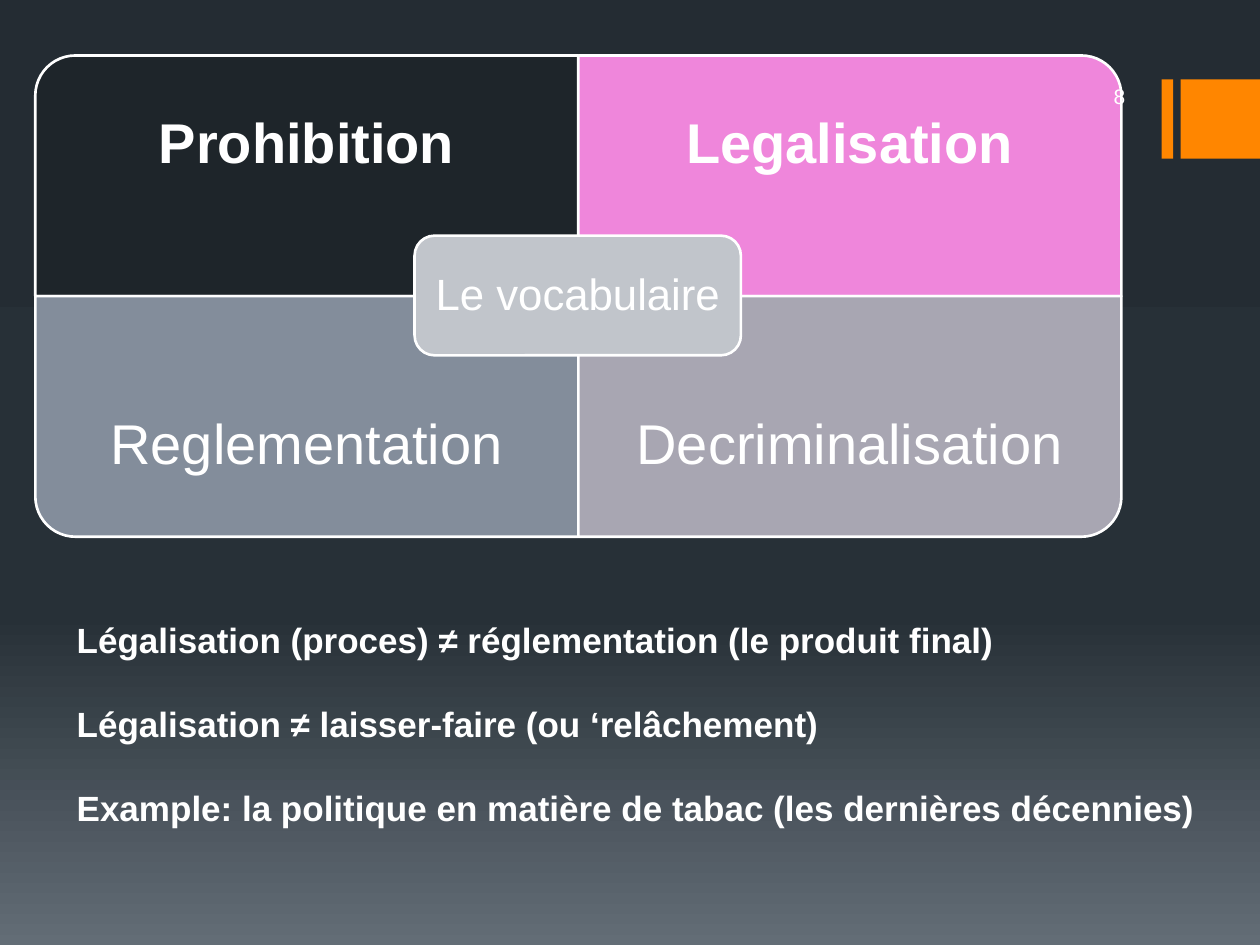
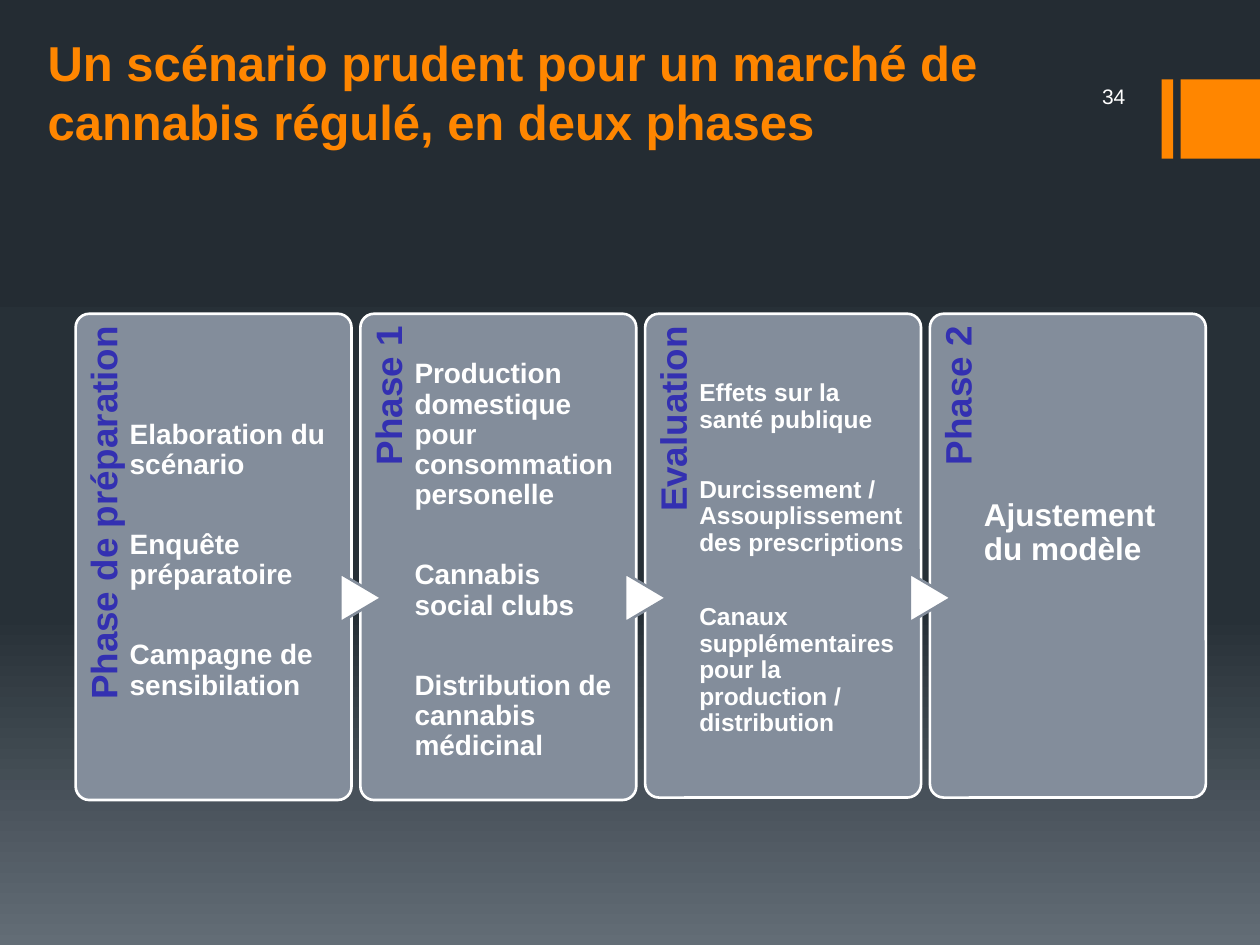
import copy

import pptx
import pptx.dml.color
import pptx.enum.shapes
import pptx.enum.text
import pptx.oxml.ns
import pptx.util

Inches = pptx.util.Inches
Pt = pptx.util.Pt
RGBColor = pptx.dml.color.RGBColor
Shape = pptx.enum.shapes.MSO_SHAPE
Align = pptx.enum.text.PP_ALIGN
Anchor = pptx.enum.text.MSO_ANCHOR

WHITE = RGBColor(0xFF, 0xFF, 0xFF)
ORANGE = RGBColor(0xFF, 0x86, 0x00)
INDIGO = RGBColor(0x33, 0x30, 0xB1)
SLATE = RGBColor(0x83, 0x8D, 0x9B)
BLACK = RGBColor(0x1E, 0x25, 0x2A)
PINK = RGBColor(0xEF, 0x86, 0xDB)
MAUVE = RGBColor(0xA8, 0xA6, 0xB2)
SILVER = RGBColor(0xC1, 0xC5, 0xCB)
BACKGROUND = (
    (0, RGBColor(0x24, 0x2C, 0x33)),
    (0.65, RGBColor(0x27, 0x30, 0x37)),
    (1, RGBColor(0x63, 0x6D, 0x76)),
)


class Deck:
    """Hold the shared style and the current slide, and draw elements on it."""

    font = "Arial"
    line_width = Pt(1.5)
    default_insets = (0.1, 0.05, 0.1, 0.05)

    def __init__(self):
        self.presentation = pptx.Presentation()
        self.presentation.slide_width = Inches(10)
        self.presentation.slide_height = Inches(7.5)
        self.slide = None

    def add_slide(self):
        self.slide = self.presentation.slides.add_slide(self.presentation.slide_layouts[6])
        fill = self.slide.background.fill
        fill.gradient()
        fill.gradient_angle = 270
        stops = next(self.slide.element.iter(pptx.oxml.ns.qn("a:gsLst")))
        stops.append(copy.deepcopy(stops[-1]))
        for stop, (position, color) in zip(fill.gradient_stops, BACKGROUND):
            stop.position = position
            stop.color.rgb = color
        self.shape(Shape.RECTANGLE, (9.22, 0.63, 0.09, 0.63), ORANGE)
        self.shape(Shape.RECTANGLE, (9.37, 0.63, 0.63, 0.63), ORANGE)

    def frame(self, bounds, turn):
        """Return the unrotated frame that covers the bounds once turned."""
        left, top, width, height = bounds
        if turn % 180:
            shift = (width - height) / 2
            left, top, width, height = left + shift, top - shift, height, width
        return [Inches(length) for length in (left, top, width, height)]

    def shape(self, kind, bounds, color, line=None, turn=0, adjustment=None):
        shape = self.slide.shapes.add_shape(kind, *self.frame(bounds, turn))
        shape.rotation = turn
        shape.shadow.inherit = False
        shape.fill.solid()
        shape.fill.fore_color.rgb = color
        if line is None:
            shape.line.fill.background()
        else:
            shape.line.color.rgb = line
            shape.line.width = self.line_width
        if adjustment is not None:
            shape.adjustments[0] = adjustment

    def text(self, lines, bounds, size, color=WHITE, bold=False, align=Align.LEFT,
             anchor=Anchor.MIDDLE, insets=default_insets, turn=0, spacing=1, gaps=()):
        """Write one paragraph per line, with the gaps in points between them."""
        box = self.slide.shapes.add_textbox(*self.frame(bounds, turn))
        box.rotation = turn
        text_frame = box.text_frame
        text_frame.word_wrap = True
        text_frame.vertical_anchor = anchor
        (text_frame.margin_left, text_frame.margin_top,
         text_frame.margin_right, text_frame.margin_bottom) = map(Inches, insets)
        text_frame.text = "\n".join(lines)
        for paragraph in text_frame.paragraphs:
            paragraph.alignment = align
            paragraph.line_spacing = spacing
            for run in paragraph.runs:
                run.font.name = self.font
                run.font.size = Pt(size)
                run.font.bold = bold
                run.font.color.rgb = color
        for paragraph, gap in zip(text_frame.paragraphs, gaps):
            paragraph.space_after = Pt(gap)

    def title(self, words):
        self.text([words], (0.28, 0.52, 8, 0.72), 28, ORANGE, True, anchor=Anchor.BOTTOM)

    def number(self, number):
        self.text([str(number)], (8, 0.6, 1.03, 0.33), 12, align=Align.RIGHT)

    def quadrant(self, word, column, row, color, turn, bold):
        left, top, width, height = 0.28, 0.44, 4.31, 1.91
        left += column * width
        self.shape(Shape.ROUND_1_RECTANGLE, (left, top + row * height, width, height),
                   color, WHITE, turn)
        text_height = 0.75 * height
        text_top = top + row * (2 * height - text_height)
        self.text([word], (left, text_top, width, text_height), 32, bold=bold,
                  align=Align.CENTER, insets=(0.25,) * 4, spacing=0.9)

    def phase(self, index, label, steps, size, height, gaps, top_inset, bottom_inset=0):
        left, top = 0.6 + index * 2.26, 2.49
        self.shape(Shape.ROUNDED_RECTANGLE, (left, top, 2.19, height), SLATE, WHITE,
                   adjustment=0.05)
        self.text([label], (left, top, 0.44, 0.82 * height), 21, INDIGO, True,
                  Align.RIGHT, Anchor.TOP, (0, 0.08, 0.1, 0), 270, 0.9)
        if index:
            self.shape(Shape.FLOWCHART_EXTRACT, (left - 0.16, 4.55, 0.33, 0.39),
                       WHITE, SLATE, 90)
        self.text(steps, (left + 0.43, top, 1.63, height), size, bold=True,
                  insets=(0, top_inset, 0, bottom_inset), spacing=0.9, gaps=gaps)


def vocabulary_slide(deck):
    deck.add_slide()
    deck.quadrant("Prohibition", 0, 0, BLACK, 270, True)
    deck.quadrant("Legalisation", 1, 0, PINK, 0, True)
    deck.quadrant("Reglementation", 0, 1, SLATE, 180, False)
    deck.quadrant("Decriminalisation", 1, 1, MAUVE, 90, False)
    deck.shape(Shape.ROUNDED_RECTANGLE, (3.29, 1.87, 2.59, 0.95), SILVER, WHITE)
    deck.text(["Le vocabulaire"], (3.34, 1.92, 2.49, 0.86), 25, align=Align.CENTER,
              insets=(0.1,) * 4, spacing=0.9)
    deck.number(8)
    deck.text([
        "Légalisation (proces) ≠ réglementation (le produit final)",
        "Légalisation ≠ laisser-faire (ou ‘relâchement)",
        "Example: la politique en matière de tabac (les dernières décennies)",
    ], (0.51, 4.86, 9.29, 2.12), 20, bold=True, anchor=Anchor.TOP, gaps=(24, 24))


def phases_slide(deck):
    deck.add_slide()
    deck.title("Un scénario prudent pour un marché de cannabis régulé, en deux phases")
    deck.number(34)
    phases = (
        ("Phase de préparation",
         ["Elaboration du scénario", "Enquête préparatoire", "Campagne de sensibilation"],
         16, 3.86, (28.5, 28.5), 0.06),
        ("Phase 1",
         ["Production domestique pour consommation personelle", "Cannabis social clubs",
          "Distribution de cannabis médicinal"],
         16, 3.86, (28.5, 28.5), 0.06),
        ("Evaluation",
         ["Effets sur la santé publique", "Durcissement / Assouplissement des prescriptions",
          "Canaux supplémentaires pour la production / distribution"],
         14, 3.84, (25, 27.5), 0.05),
        ("Phase 2", ["Ajustement du modèle"], 18, 3.84, (), 0.07, 0.42),
    )
    for index, phase in enumerate(phases):
        deck.phase(index, *phase)


def main():
    deck = Deck()
    vocabulary_slide(deck)
    phases_slide(deck)
    deck.presentation.save("out.pptx")


if __name__ == "__main__":
    main()
